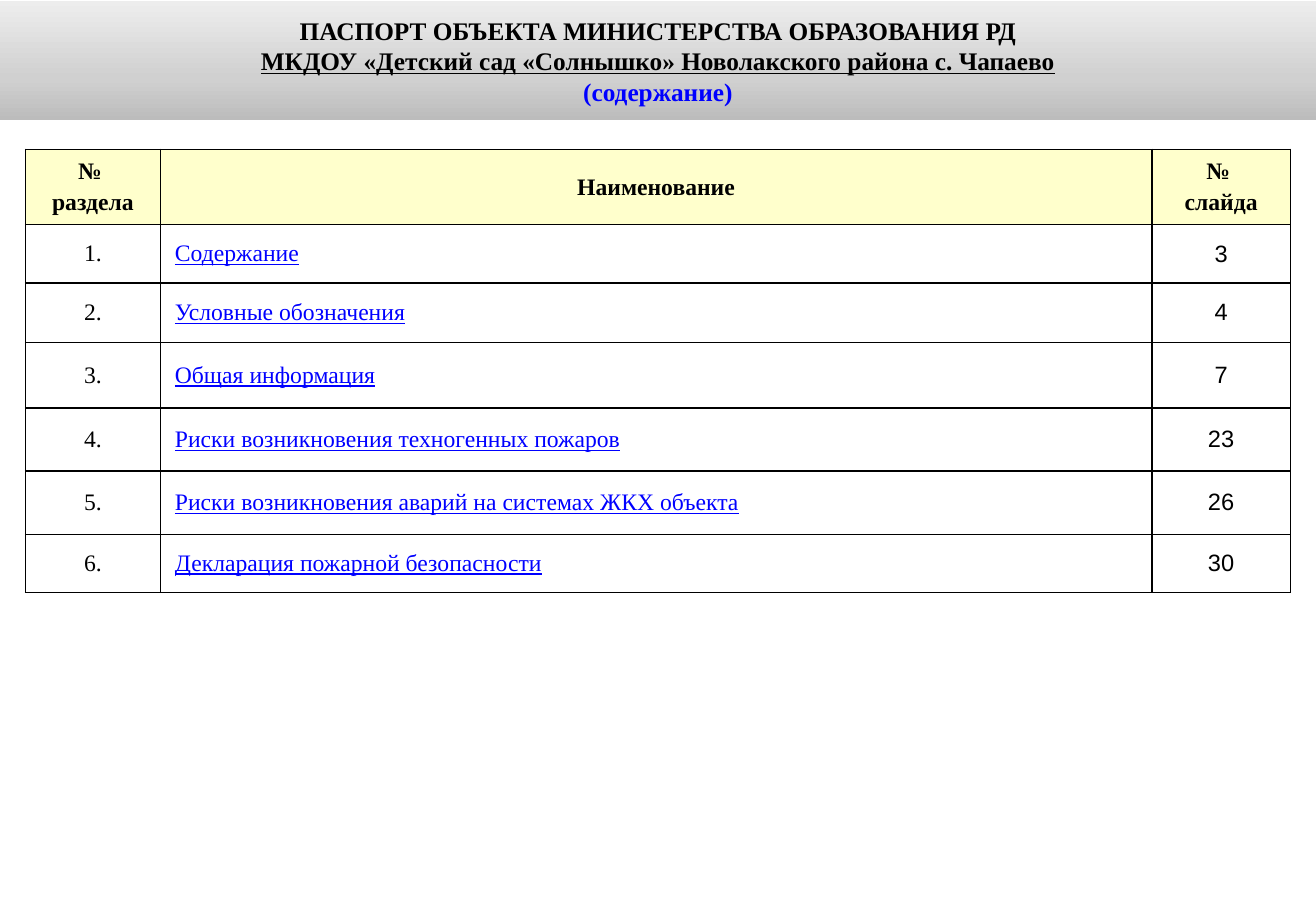
from copy import deepcopy
from dataclasses import dataclass

from lxml.etree import SubElement
from pptx import Presentation
from pptx.dml.color import RGBColor
from pptx.enum.shapes import MSO_SHAPE
from pptx.enum.text import MSO_ANCHOR, PP_ALIGN
from pptx.oxml.ns import qn
from pptx.util import Inches, Pt


@dataclass(frozen=True)
class Theme:
    serif: str = "Times New Roman"
    sans: str = "Arial"
    black: str = "000000"
    white: str = "FFFFFF"
    blue: str = "0000FF"
    header_fill: str = "FFFFCC"
    banner_stops: tuple = ((0, "BCBCBC"), (0.35, "D0D0D0"), (1, "EDEDED"))
    title_size: int = 15
    table_size: int = 14
    border_width: int = 1


TITLE = (
    "ПАСПОРТ ОБЪЕКТА МИНИСТЕРСТВА ОБРАЗОВАНИЯ РД",
    "МКДОУ «Детский сад «Солнышко» Новолакского района с. Чапаево",
    "(содержание)",
)
HEADINGS = ("№ \nраздела", "Наименование", "№ \nслайда")
SECTIONS = (
    ("Содержание", 3),
    ("Условные обозначения", 4),
    ("Общая информация", 7),
    ("Риски возникновения техногенных пожаров", 23),
    ("Риски возникновения аварий на системах ЖКХ объекта", 26),
    ("Декларация пожарной безопасности", 30),
)
COLUMN_WIDTHS = (1.11, 8.16, 1.14)
ROW_HEIGHTS = (0.62, 0.48, 0.49, 0.54, 0.52, 0.52, 0.48)


class ContentsPage:
    def __init__(self, deck, theme):
        self.theme = theme
        self.page = deck.slides.add_slide(deck.slide_layouts[6])

    def style(self, paragraph, size, color=None, font=None, bold=False,
              underline=False, align=PP_ALIGN.CENTER):
        paragraph.alignment = align
        for span in paragraph.runs:
            span.font.name = font or self.theme.serif
            span.font.size = Pt(size)
            span.font.bold = bold
            span.font.underline = underline
            span.font.color.rgb = RGBColor.from_string(color or self.theme.black)

    def banner(self, left, top, width, height, lines):
        box = self.page.shapes.add_shape(
            MSO_SHAPE.RECTANGLE, Inches(left), Inches(top), Inches(width), Inches(height))
        box.shadow.inherit = False
        box.line.fill.background()
        self.fill_gradient(box)
        frame = box.text_frame
        frame.word_wrap = True
        frame.vertical_anchor = MSO_ANCHOR.MIDDLE
        frame.margin_left = frame.margin_right = Inches(0.09)
        frame.text = "\n".join(lines)
        for index, paragraph in enumerate(frame.paragraphs):
            self.style(paragraph, self.theme.title_size, bold=True, underline=index == 1,
                       color=self.theme.blue if index == 2 else None)

    def fill_gradient(self, box):
        """Fill from the bottom edge upwards with the three banner stops."""
        box.fill.gradient()
        box.fill.gradient_angle = 90
        stop_list = box.element.spPr.find(".//" + qn("a:gsLst"))
        stop_list.append(deepcopy(stop_list[0]))
        for stop, (position, color) in zip(box.fill.gradient_stops, self.theme.banner_stops):
            stop.position = position
            stop.color.rgb = RGBColor.from_string(color)

    def table(self, left, top, widths, heights):
        frame = self.page.shapes.add_table(
            len(heights), len(widths), Inches(left), Inches(top),
            Inches(sum(widths)), Inches(sum(heights)))
        table = frame.table
        table.first_row = table.horz_banding = False
        for column, width in zip(table.columns, widths):
            column.width = Inches(width)
        for row, height in zip(table.rows, heights):
            row.height = Inches(height)
        return table

    def cell(self, cell, text, fill, **text_style):
        cell.margin_left = cell.margin_right = Inches(0.12)
        cell.margin_top = cell.margin_bottom = Inches(0.05)
        cell.vertical_anchor = MSO_ANCHOR.MIDDLE
        self.border(cell)
        cell.fill.solid()
        cell.fill.fore_color.rgb = RGBColor.from_string(fill)
        cell.text_frame.text = text
        for index, paragraph in enumerate(cell.text_frame.paragraphs):
            self.style(paragraph, self.theme.table_size, **text_style)
            if index:
                paragraph.space_before = Pt(0.2 * self.theme.table_size)

    def border(self, cell):
        properties = cell._tc.get_or_add_tcPr()
        for side in ("a:lnL", "a:lnR", "a:lnT", "a:lnB"):
            line = SubElement(properties, qn(side), w=str(Pt(self.theme.border_width)))
            solid = SubElement(line, qn("a:solidFill"))
            SubElement(solid, qn("a:srgbClr"), val=self.theme.black)


def main():
    theme = Theme()
    deck = Presentation()
    deck.slide_width, deck.slide_height = Inches(10.83), Inches(7.5)
    contents = ContentsPage(deck, theme)

    table = contents.table(0.21, 1.23, COLUMN_WIDTHS, ROW_HEIGHTS)
    for column, heading in enumerate(HEADINGS):
        contents.cell(table.cell(0, column), heading, theme.header_fill, bold=True)
    for row, (name, slide_number) in enumerate(SECTIONS, start=1):
        contents.cell(table.cell(row, 0), f"{row}.", theme.white)
        contents.cell(table.cell(row, 1), name, theme.white, color=theme.blue,
                      underline=True, align=PP_ALIGN.LEFT)
        contents.cell(table.cell(row, 2), str(slide_number), theme.white, font=theme.sans)

    contents.banner(0, 0.01, 10.83, 0.98, TITLE)
    deck.save("out.pptx")


if __name__ == "__main__":
    main()
